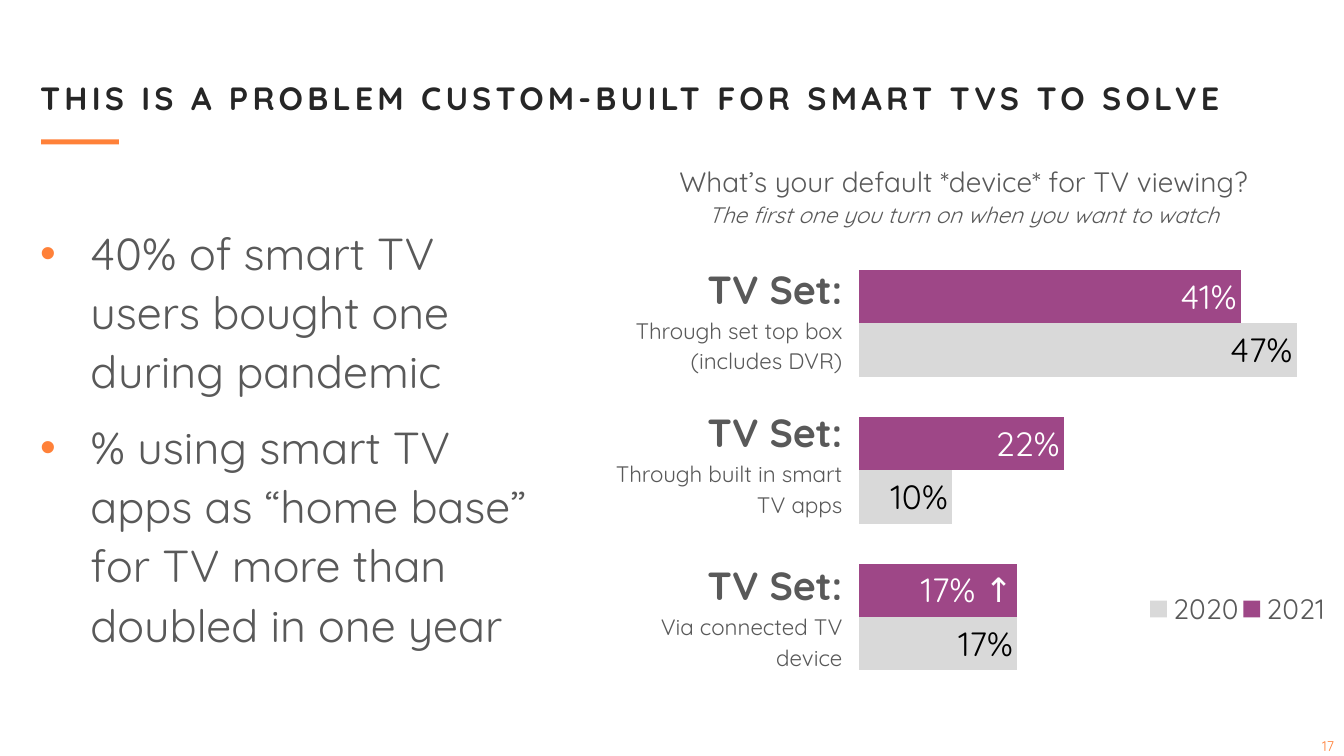
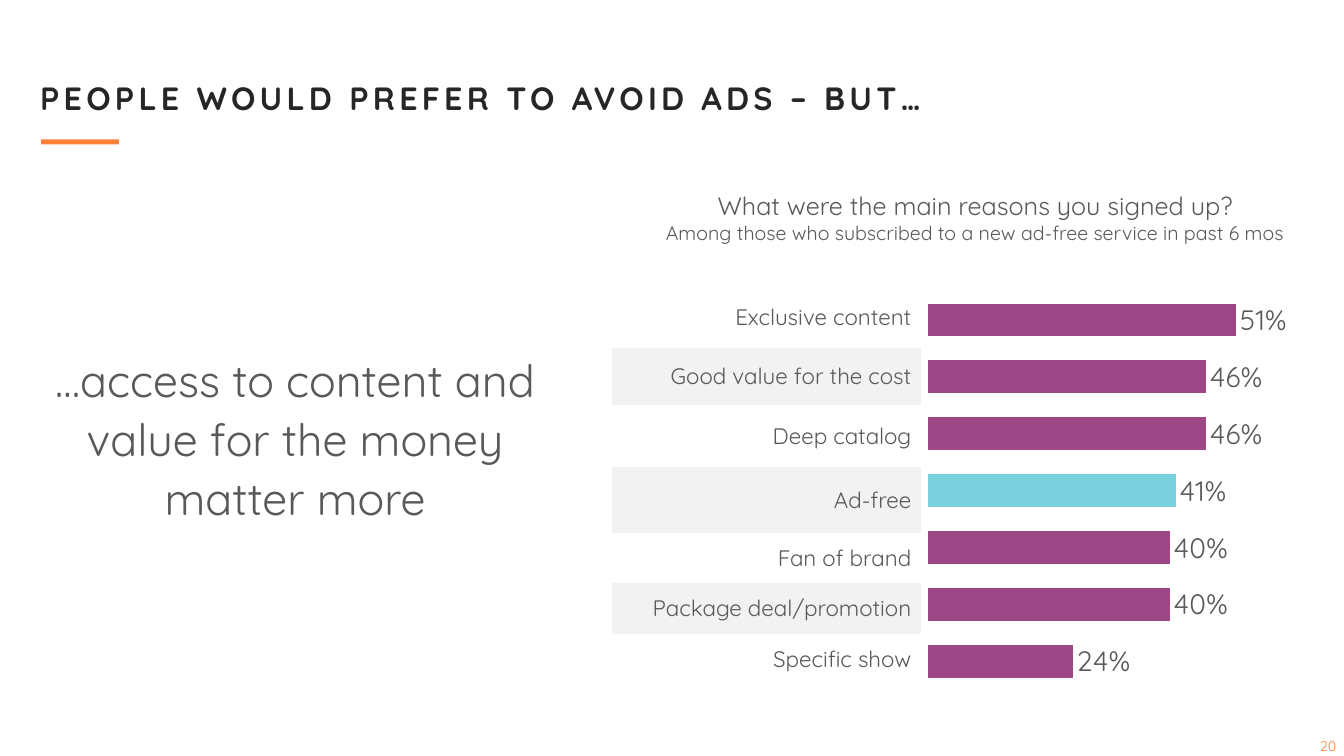
import pptx
import pptx.util
import pptx.chart.data
import pptx.dml.color
import pptx.enum.chart
import pptx.enum.shapes
import pptx.enum.text
import pptx.oxml
import pptx.oxml.ns
from pptx.util import Cm, Pt

FONT = "Quicksand"
COLORS = {
    "accent": "FF8139", "title": "262626", "body": "595959", "purple": "9E4787",
    "silver": "D9D9D9", "teal": "7BD0DF", "band": "F2F2F2", "white": "FFFFFF", "black": "000000",
}
PLAIN_TABLE = "{2D5ABB26-0587-4C30-8999-92F81FD0307C}"
ALIGN = pptx.enum.text.PP_ALIGN
ANCHOR = pptx.enum.text.MSO_ANCHOR
LABEL_POSITION = pptx.enum.chart.XL_LABEL_POSITION

DEVICES = {
    "title": "THIS IS A PROBLEM CUSTOM-BUILT FOR SMART TVS TO SOLVE",
    "number": "17",
    "points": [
        "40% of smart TV users bought one during pandemic",
        "% using smart TV apps as “home base” for TV more than doubled in one year",
    ],
    "question": "What’s your default *device* for TV viewing?",
    "note": "The first one you turn on when you want to watch",
    "rows": [
        ("TV Set:", "Through set top box (includes DVR)", 3.38),
        ("TV Set:", "Through built in smart TV apps", 3.86),
        ("TV Set:", "Via connected TV device", 3.86),
    ],
    "series": [
        ("2021", (0.41, 0.22, 0.17), "purple", "white"),
        ("2020", (0.47, 0.10, 0.17), "silver", "black"),
    ],
    "rising": (0, 2, "17% ↑"),
}
REASONS = {
    "title": "PEOPLE WOULD PREFER TO AVOID ADS – BUT…",
    "number": "20",
    "statement": "…access to content and value for the money matter more",
    "question": "What were the main reasons you signed up?",
    "note": "Among those who subscribed to a new ad-free service in past 6 mos",
    "rows": [
        ("Exclusive content", 0.51, 1.55),
        ("Good value for the cost", 0.46, 1.45),
        ("Deep catalog", 0.46, 1.57),
        ("Ad-free", 0.41, 1.65),
        ("Fan of brand", 0.40, 1.27),
        ("Package deal/promotion", 0.40, 1.27),
        ("Specific show", 0.24, 1.27),
    ],
    "highlight": 3,
}


def rgb(name):
    return pptx.dml.color.RGBColor.from_string(COLORS[name])


def style_font(font, size, color="body", bold=False, italic=False):
    font.name = FONT
    font.size = Pt(size)
    font.color.rgb = rgb(color)
    font.bold = bold
    font.italic = italic


def write(frame, lines, align=ALIGN.LEFT, spacing=1.0):
    for index, (text, style) in enumerate(lines):
        paragraph = frame.paragraphs[0] if index == 0 else frame.add_paragraph()
        paragraph.text = text
        paragraph.alignment = align
        paragraph.line_spacing = spacing
        style_font(paragraph.runs[0].font, **style)


def add_text(slide, place, lines, align=ALIGN.LEFT, anchor=ANCHOR.MIDDLE, spacing=1.1):
    frame = slide.shapes.add_textbox(*map(Cm, place)).text_frame
    frame.word_wrap = True
    frame.vertical_anchor = anchor
    write(frame, lines, align, spacing)
    return frame


def add_bullet(paragraph):
    properties = paragraph._p.get_or_add_pPr()
    properties.set("marL", str(Cm(1.27)))
    properties.set("indent", str(-Cm(1.27)))
    namespace = pptx.oxml.ns.nsdecls("a")
    for markup in (
        f'<a:buClr {namespace}><a:srgbClr val="{COLORS["accent"]}"/></a:buClr>',
        f'<a:buFont {namespace} typeface="Arial"/>',
        f'<a:buChar {namespace} char="•"/>',
    ):
        properties.append(pptx.oxml.parse_xml(markup))


def start_slide(deck, content):
    slide = deck.slides.add_slide(deck.slide_layouts[6])
    rule = slide.shapes.add_shape(
        pptx.enum.shapes.MSO_SHAPE.RECTANGLE, Cm(1.04), Cm(3.51), Cm(1.96), Cm(0.13))
    rule.shadow.inherit = False
    rule.fill.solid()
    rule.fill.fore_color.rgb = rgb("accent")
    rule.line.fill.background()
    title = add_text(slide, (0.76, 1.32, 32.31, 2.18),
                     [(content["title"], dict(size=23, color="title", bold=True))])
    title.paragraphs[0].runs[0]._r.get_or_add_rPr().set("spc", "300")
    add_text(slide, (32.82, 18.47, 1.3, 0.89),
             [(content["number"], dict(size=10, color="accent"))],
             ALIGN.CENTER, ANCHOR.TOP, 1.0)
    return slide


def add_plain_table(slide, left, top, widths, heights):
    table = slide.shapes.add_table(
        len(heights), len(widths), Cm(left), Cm(top), Cm(sum(widths)), Cm(sum(heights))).table
    table.first_row = table.horz_banding = False
    table._tbl.tblPr.find(pptx.oxml.ns.qn("a:tableStyleId")).text = PLAIN_TABLE
    for column, width in zip(table.columns, widths):
        column.width = Cm(width)
    for row, height in zip(table.rows, heights):
        row.height = Cm(height)
    for cell in table.iter_cells():
        cell.fill.background()
        cell.vertical_anchor = ANCHOR.MIDDLE
    return table


def set_layout(parent, index, box):
    tag = pptx.oxml.ns.qn("c:layout")
    for old in parent.findall(tag):
        parent.remove(old)
    inner = '<c:layoutTarget val="inner"/>' if index == 0 else ""
    modes = '<c:xMode val="edge"/><c:yMode val="edge"/>'
    sizes = "".join(f'<c:{key} val="{value}"/>' for key, value in zip("xywh", box))
    parent.insert(index, pptx.oxml.parse_xml(
        f'<c:layout {pptx.oxml.ns.nsdecls("c")}><c:manualLayout>'
        f"{inner}{modes}{sizes}</c:manualLayout></c:layout>"))


def add_bars(slide, place, series, maximum, plot_box, label_size, label_position):
    data = pptx.chart.data.CategoryChartData(number_format="0%")
    data.categories = [str(number + 1) for number in range(len(series[0][1]))]
    for name, values, _, _ in series:
        data.add_series(name, values)
    chart = slide.shapes.add_chart(
        pptx.enum.chart.XL_CHART_TYPE.BAR_CLUSTERED, *map(Cm, place), data).chart
    chart.has_title = False
    chart.has_legend = False
    style_font(chart.font, 18, "black")
    chart.category_axis.reverse_order = True
    chart.category_axis.visible = False
    chart.value_axis.minimum_scale = 0
    chart.value_axis.maximum_scale = maximum
    chart.value_axis.has_major_gridlines = False
    chart.value_axis.visible = False
    plot = chart.plots[0]
    plot.gap_width = 75
    plot.overlap = 0
    plot.vary_by_categories = False
    set_layout(plot._element.getparent(), 0, plot_box)
    for bars, (_, _, fill, label_color) in zip(plot.series, series):
        bars.format.fill.solid()
        bars.format.fill.fore_color.rgb = rgb(fill)
        labels = bars.data_labels
        labels.show_value = True
        labels.number_format = "0%"
        labels.number_format_is_linked = False
        labels.position = label_position
        style_font(labels.font, label_size, label_color)
    return chart


def build_devices(deck):
    slide = start_slide(deck, DEVICES)
    chart = add_bars(slide, (21.64, 6.3, 11.86, 11.1), DEVICES["series"], 0.5,
                     (0, 0, 0.99, 1), 24, LABEL_POSITION.INSIDE_END)
    series_index, point_index, text = DEVICES["rising"]
    label = chart.plots[0].series[series_index].points[point_index].data_label
    label.text_frame.text = text
    style_font(label.text_frame.paragraphs[0].runs[0].font, 24, "white")
    label.position = LABEL_POSITION.INSIDE_END
    chart.has_legend = True
    chart.legend.position = pptx.enum.chart.XL_LEGEND_POSITION.RIGHT
    chart.legend.include_in_layout = False
    style_font(chart.legend.font, 20)
    set_layout(chart.legend._element, 1, (0.61, 0.77, 0.39, 0.09))

    table = add_plain_table(slide, 15.27, 6.3, (5.99, 0.38), [row[2] for row in DEVICES["rows"]])
    for index, (device, route, _) in enumerate(DEVICES["rows"]):
        cell = table.cell(index, 0)
        cell.margin_left = cell.margin_right = cell.margin_top = Cm(0.03)
        cell.margin_bottom = 0
        write(cell.text_frame, [(device, dict(size=28, bold=True)), (route, dict(size=16))],
              ALIGN.RIGHT, 1.1)

    add_text(slide, (16.26, 3.99, 16.05, 1.88),
             [(DEVICES["question"], dict(size=20)), (DEVICES["note"], dict(size=16, italic=True))],
             ALIGN.CENTER, ANCHOR.BOTTOM)
    points = add_text(slide, (0.76, 3.51, 12.95, 14.94),
                      [(point, dict(size=32)) for point in DEVICES["points"]])
    for index, paragraph in enumerate(points.paragraphs):
        if index:
            paragraph.space_before = Pt(12)
        add_bullet(paragraph)


def build_reasons(deck):
    slide = start_slide(deck, REASONS)
    values = [row[1] for row in REASONS["rows"]]
    chart = add_bars(slide, (16.94, 6.91, 16.94, 10.8), [("Series 1", values, "purple", "body")],
                     0.6, (0.38, 0.04, 0.54, 0.93), 20, LABEL_POSITION.OUTSIDE_END)
    highlight = chart.plots[0].series[0].points[REASONS["highlight"]].format.fill
    highlight.solid()
    highlight.fore_color.rgb = rgb("teal")

    table = add_plain_table(slide, 15.42, 7.21, (7.8,), [row[2] for row in REASONS["rows"]])
    for index, (reason, _, _) in enumerate(REASONS["rows"]):
        cell = table.cell(index, 0)
        cell.fill.solid()
        cell.fill.fore_color.rgb = rgb("band" if index % 2 else "white")
        write(cell.text_frame, [(reason, dict(size=16))], ALIGN.RIGHT)

    add_text(slide, (16.08, 4.67, 16.99, 1.63),
             [(REASONS["question"], dict(size=18)), (REASONS["note"], dict(size=14))],
             ALIGN.CENTER, ANCHOR.TOP, 1.0)
    add_text(slide, (0.76, 3.51, 13.36, 14.94), [(REASONS["statement"], dict(size=32))],
             ALIGN.CENTER)


def main():
    deck = pptx.Presentation()
    deck.slide_width, deck.slide_height = Cm(33.87), Cm(19.05)
    build_devices(deck)
    build_reasons(deck)
    deck.save("out.pptx")


if __name__ == "__main__":
    main()
